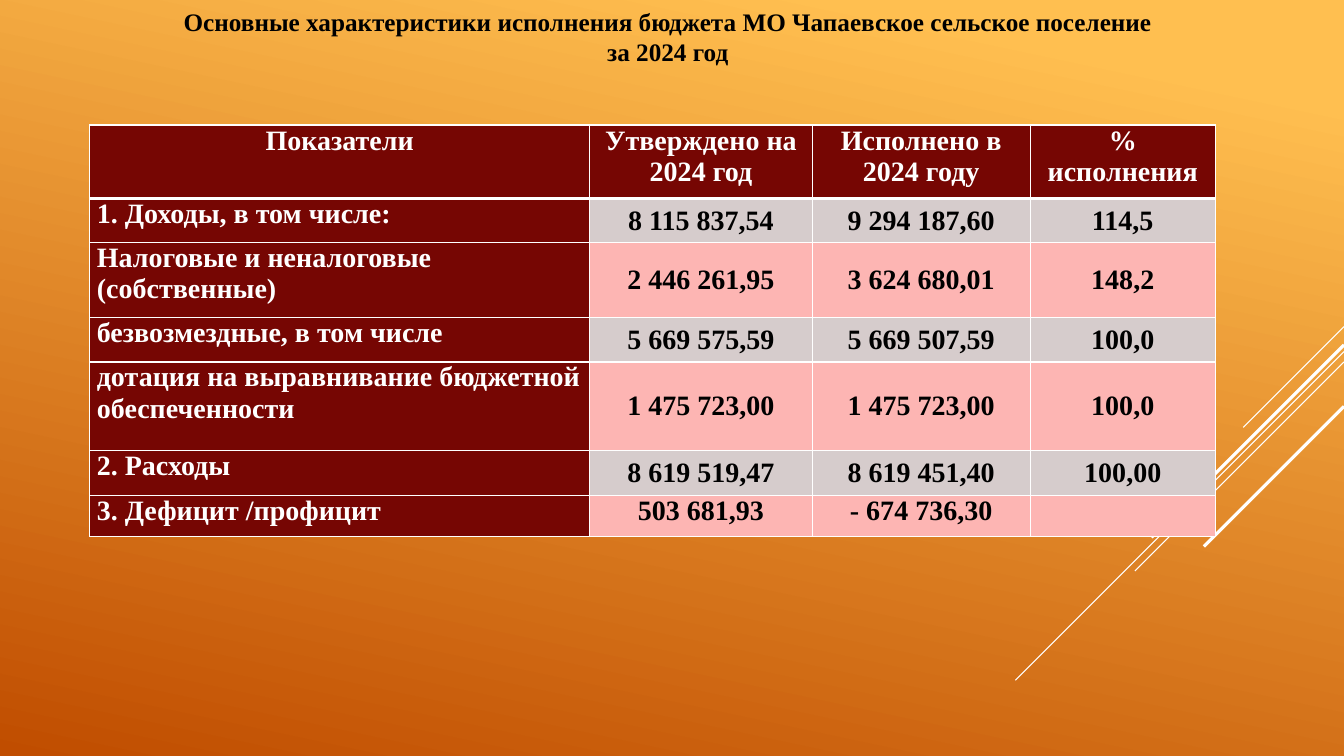
from lxml.etree import SubElement
from pptx import Presentation
from pptx.dml.color import RGBColor
from pptx.enum.shapes import MSO_CONNECTOR as Connector
from pptx.enum.text import MSO_ANCHOR as Anchor, PP_ALIGN as Align
from pptx.oxml import parse_xml
from pptx.oxml.ns import nsdecls, qn
from pptx.util import Cm, Pt

WHITE = RGBColor(0xFF, 0xFF, 0xFF)
BLACK = RGBColor(0, 0, 0)
AMBER = RGBColor(0xFF, 0xBF, 0x50)
RUST = RGBColor(0xC0, 0x4D, 0x00)
MAROON = RGBColor(0x76, 0x06, 0x03)
GREY = RGBColor(0xD6, 0xCC, 0xCC)
PINK = RGBColor(0xFD, 0xB5, 0xB3)

WIDTH, HEIGHT = 33.87, 19.05

TITLE = ["Основные характеристики исполнения бюджета МО Чапаевское сельское поселение",
         "за 2024 год"]
BUDGET = [
    ["Показатели", "Утверждено на 2024 год", "Исполнено в 2024 году", "% исполнения"],
    ["1. Доходы, в том числе:", "8 115 837,54", "9 294 187,60", "114,5"],
    ["Налоговые и неналоговые (собственные)", "2 446 261,95", "3 624 680,01", "148,2"],
    ["безвозмездные, в том числе", "5 669 575,59", "5 669 507,59", "100,0"],
    ["дотация на выравнивание бюджетной обеспеченности",
     "1 475 723,00", "1 475 723,00", "100,0"],
    ["2. Расходы", "8 619 519,47", "8 619 451,40", "100,00"],
    ["3. Дефицит /профицит", "503 681,93", "- 674 736,30", ""],
]
COLUMN_WIDTHS = [12.6, 5.61, 5.49, 4.67]
ROW_HEIGHTS = [1.85, 1.12, 1.88, 1.12, 2.24, 1.12, 1.04]

# Diagonals from the right edge: start height, horizontal run, line width
DIAGONALS = [(8.23, 2.54, 0.75), (8.86, 8.28, 0.75), (9.12, 5.27, 0.75),
             (8.69, 4.85, 2.25), (10.24, 3.53, 2.25)]


class BudgetSlide:
    font_style = {"name": "Times New Roman", "bold": True}
    cell_margins = {"margin_left": Cm(0.18), "margin_right": Cm(0.18),
                    "margin_top": 0, "margin_bottom": 0}

    def __init__(self, deck):
        self.slide = deck.slides.add_slide(deck.slide_layouts[6])

    def background(self, stops, angle):
        fill = self.slide.background.fill
        fill.gradient()
        fill.gradient_angle = angle
        for stop, (position, color) in zip(fill.gradient_stops, stops):
            stop.position = position
            stop.color.rgb = color

    def diagonal(self, top, run, width):
        stroke = self.slide.shapes.add_connector(
            Connector.STRAIGHT, Cm(WIDTH), Cm(top), Cm(WIDTH - run), Cm(top + run))
        stroke.line.color.rgb = WHITE
        stroke.line.width = Pt(width)
        SubElement(stroke._element.spPr, qn("a:effectLst"))

    def label(self, paragraph, text, size, color, align):
        paragraph.alignment = align
        if not text:
            return
        run = paragraph.add_run()
        run.text = text
        for key, value in {**self.font_style, "size": Pt(size)}.items():
            setattr(run.font, key, value)
        run.font.color.rgb = color

    def title(self, lines, left, top, width, height):
        frame = self.slide.shapes.add_textbox(
            Cm(left), Cm(top), Cm(width), Cm(height)).text_frame
        frame.word_wrap = True
        for i, line in enumerate(lines):
            paragraph = frame.add_paragraph() if i else frame.paragraphs[0]
            self.label(paragraph, line, 18, BLACK, Align.CENTER)

    def borders(self, cell, widths):
        properties = cell._tc.get_or_add_tcPr()
        for i, (side, width) in enumerate(widths.items()):
            properties.insert(i, parse_xml(
                f'<a:ln{side} {nsdecls("a")} w="{Pt(width)}"><a:solidFill>'
                f'<a:srgbClr val="{WHITE}"/></a:solidFill></a:ln{side}>'))

    def table(self, rows, left, top, widths, heights):
        table = self.slide.shapes.add_table(
            len(rows), len(widths), Cm(left), Cm(top),
            Cm(sum(widths)), Cm(sum(heights))).table
        for column, width in zip(table.columns, widths):
            column.width = Cm(width)
        for row, height in zip(table.rows, heights):
            row.height = Cm(height)

        last = len(rows) - 1
        for r, row in enumerate(rows):
            for c, text in enumerate(row):
                cell = table.cell(r, c)
                heading = r == 0 or c == 0
                middle = not heading and r < last
                style = {**self.cell_margins,
                         "vertical_anchor": Anchor.MIDDLE if middle else Anchor.TOP}
                for key, value in style.items():
                    setattr(cell, key, value)
                cell.fill.solid()
                cell.fill.fore_color.rgb = MAROON if heading else (PINK, GREY)[r % 2]
                self.borders(cell, {"L": 1, "R": 1, "T": 3 if r == 1 else 1,
                                    "B": 3 if r == 0 else 1})
                self.label(cell.text_frame.paragraphs[0], text, 20,
                           WHITE if heading else BLACK,
                           Align.LEFT if c == 0 and r else Align.CENTER)


def main():
    deck = Presentation()
    deck.slide_width, deck.slide_height = Cm(WIDTH), Cm(HEIGHT)
    page = BudgetSlide(deck)

    # Backdrop
    page.background([(0.1, AMBER), (1, RUST)], 258)
    for diagonal in DIAGONALS:
        page.diagonal(*diagonal)

    # Heading and budget figures
    page.title(TITLE, 2.06, 0.03, 29.54, 1.8)
    page.table(BUDGET, 2.26, 3.15, COLUMN_WIDTHS, ROW_HEIGHTS)

    deck.save("out.pptx")


if __name__ == "__main__":
    main()
